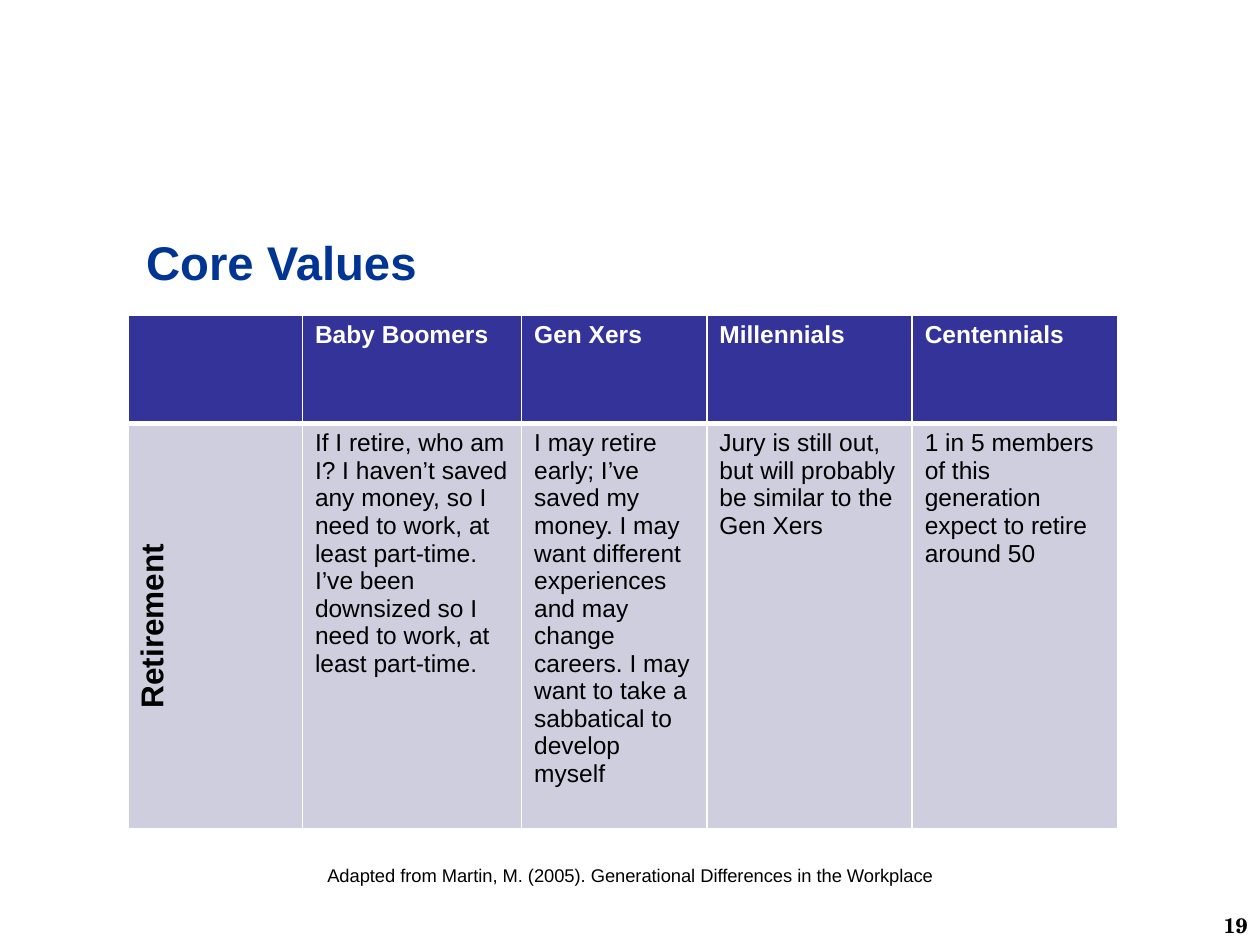
from dataclasses import dataclass

from lxml import etree
from pptx import Presentation
from pptx.dml.color import RGBColor
from pptx.enum.text import MSO_ANCHOR, PP_ALIGN
from pptx.oxml.ns import qn
from pptx.util import Inches, Pt

LEFT, CENTER, RIGHT = PP_ALIGN.LEFT, PP_ALIGN.CENTER, PP_ALIGN.RIGHT
TOP, MIDDLE = MSO_ANCHOR.TOP, MSO_ANCHOR.MIDDLE
TITLE_ONLY = 5


@dataclass(frozen=True)
class Theme:
    font: str = "Arial"
    number_font: str = "TeX Gyre Schola"
    title_color: str = "003594"
    header_fill: str = "333399"
    body_fill: str = "CECEDE"
    light: str = "FFFFFF"
    dark: str = "000000"
    title_size: float = 27
    label_size: float = 18
    table_size: float = 14
    number_size: float = 12
    source_size: float = 10.5
    thin_rule: float = 1
    header_rule: float = 3


HEADERS = ["", "Baby Boomers", "Gen Xers", "Millennials", "Centennials"]
RETIREMENT = [
    "Retirement",
    "If I retire, who am I? I haven’t saved any money, so I need to work, "
    "at least part-time. I’ve been downsized so I need to work, at least part-time.",
    "I may retire early; I’ve saved my money. I may want different experiences "
    "and may change careers. I may want to take a sabbatical to develop myself",
    "Jury is still out, but will probably be similar to the Gen Xers",
    "1 in 5 members of this generation expect to retire around 50",
]
COLUMN_WIDTHS = [1.38, 1.74, 1.47, 1.63, 1.63]
ROW_HEIGHTS = [0.86, 3.22]


class SlideBuilder:
    def __init__(self, slide, theme):
        self.slide = slide
        self.theme = theme

    def fill_text(self, frame, text, size, color, bold=False, align=LEFT, font=None):
        frame.word_wrap = True
        paragraph = frame.paragraphs[0]
        paragraph.text = text
        paragraph.alignment = align
        paragraph.font.name = font or self.theme.font
        paragraph.font.size = Pt(size)
        paragraph.font.bold = bold
        paragraph.font.color.rgb = RGBColor.from_string(color)

    def title(self, text, left, top, width, height):
        shape = self.slide.shapes.title
        shape.left, shape.top = Inches(left), Inches(top)
        shape.width, shape.height = Inches(width), Inches(height)
        shape.text_frame.vertical_anchor = MIDDLE
        self.fill_text(shape.text_frame, text, self.theme.title_size,
                       self.theme.title_color, bold=True)

    def text(self, text, left, top, width, height, size, anchor=TOP, **style):
        shape = self.slide.shapes.add_textbox(
            Inches(left), Inches(top), Inches(width), Inches(height))
        shape.text_frame.vertical_anchor = anchor
        self.fill_text(shape.text_frame, text, size, self.theme.dark, **style)

    def borders(self, cell, top, bottom):
        """Rule all four sides; the schema wants the lines ahead of the fill."""
        thin = self.theme.thin_rule
        widths = {"a:lnL": thin, "a:lnR": thin, "a:lnT": top, "a:lnB": bottom}
        properties = cell._tc.get_or_add_tcPr()
        for position, (tag, width) in enumerate(widths.items()):
            line = etree.Element(qn(tag), w=str(Pt(width)))
            fill = etree.SubElement(line, qn("a:solidFill"))
            etree.SubElement(fill, qn("a:srgbClr"), val=self.theme.light)
            properties.insert(position, line)

    def cell(self, cell, text, fill, color, size, top, bottom, **style):
        cell.fill.solid()
        cell.fill.fore_color.rgb = RGBColor.from_string(fill)
        self.fill_text(cell.text_frame, text, size, color, **style)
        self.borders(cell, top, bottom)

    def table(self, left, top, headers, values):
        theme = self.theme
        table = self.slide.shapes.add_table(
            len(ROW_HEIGHTS), len(COLUMN_WIDTHS), Inches(left), Inches(top),
            Inches(sum(COLUMN_WIDTHS)), Inches(sum(ROW_HEIGHTS))).table
        for column, width in zip(table.columns, COLUMN_WIDTHS):
            column.width = Inches(width)
        for row, height in zip(table.rows, ROW_HEIGHTS):
            row.height = Inches(height)
        for index, (header, value) in enumerate(zip(headers, values)):
            is_label = index == 0
            self.cell(table.cell(0, index), header, theme.header_fill, theme.light,
                      theme.table_size, theme.thin_rule, theme.header_rule, bold=True)
            self.cell(table.cell(1, index), value, theme.body_fill, theme.dark,
                      theme.label_size if is_label else theme.table_size,
                      theme.header_rule, theme.thin_rule,
                      bold=is_label, align=CENTER if is_label else LEFT)
        table.cell(1, 0)._tc.get_or_add_tcPr().set("vert", "vert270")


def main():
    presentation = Presentation()
    presentation.slide_width, presentation.slide_height = Inches(10), Inches(7.5)
    slide = presentation.slides.add_slide(presentation.slide_layouts[TITLE_ONLY])
    theme = Theme()
    builder = SlideBuilder(slide, theme)

    builder.title("Core Values", 1.06, 1.75, 9, 0.66)
    builder.table(1.02, 2.5, HEADERS, RETIREMENT)
    builder.text("Adapted from Martin, M. (2005). Generational Differences in the Workplace",
                 2.5, 6.81, 6.04, 0.28, theme.source_size)
    builder.text("19", 8.89, 7.24, 1.11, 0.21, theme.number_size, anchor=MIDDLE,
                 bold=True, align=RIGHT, font=theme.number_font)

    presentation.save("out.pptx")


if __name__ == "__main__":
    main()
